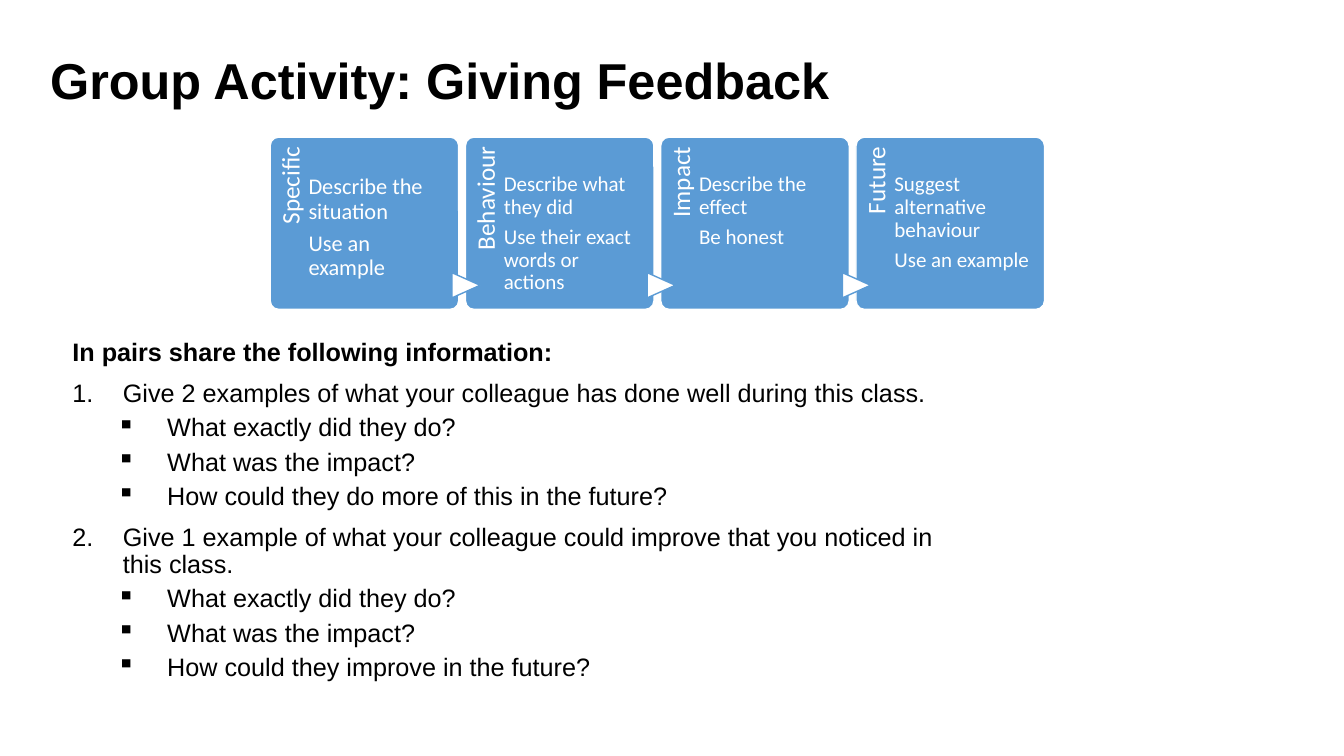
from dataclasses import dataclass

import pptx
import pptx.dml.color
import pptx.enum.shapes
import pptx.enum.text
import pptx.oxml
import pptx.oxml.ns
import pptx.util
from pptx.util import Inches

BLACK, WHITE, BLUE = "000000", "FFFFFF", "5B9BD5"
PRESET = pptx.enum.shapes.MSO_SHAPE
ALIGN = pptx.enum.text.PP_ALIGN
ANCHOR = pptx.enum.text.MSO_ANCHOR

CARD_LEFT, CARD_TOP, CARD_WIDTH, CARD_HEIGHT = 2.68, 1.36, 1.87, 1.71
CARD_STEP = (8.49 - CARD_LEFT) / 3


@dataclass
class Step:
    name: str
    advice: list[str]
    size: int = 15


@dataclass
class Line:
    text: str
    kind: str = "detail"


@dataclass
class LineStyle:
    level: int
    before: int
    indent: float
    bullet: str


STEPS = [
    Step("Specific", ["Describe the situation", "Use an example"], 16),
    Step("Behaviour", ["Describe what they did", "Use their exact words or actions"]),
    Step("Impact", ["Describe the effect", "Be honest"]),
    Step("Future", ["Suggest alternative behaviour", "Use an example"]),
]
TASKS = [
    Line("In pairs share the following information:", "heading"),
    Line("Give 2 examples of what your colleague has done well during this class.", "task"),
    Line("What exactly did they do?"),
    Line("What was the impact?"),
    Line("How could they do more of this in the future?"),
    Line("Give 1 example of what your colleague could improve that you noticed in this class.", "task"),
    Line("What exactly did they do?"),
    Line("What was the impact?"),
    Line("How could they improve in the future?"),
]
LINE_STYLES = {
    "heading": LineStyle(0, 0, 0, ""),
    "task": LineStyle(0, 10, 0.5, '<a:buAutoNum {} type="arabicPeriod"/>'),
    "detail": LineStyle(1, 5, 0.94, '<a:buChar {} char="▪"/>'),
}


def rgb(color: str) -> pptx.dml.color.RGBColor:
    return pptx.dml.color.RGBColor.from_string(color)


def add_box(slide, left: float, top: float, width: float, height: float,
            insets=(0.1, 0.05, 0.1, 0.05)):
    """Add a wrapping text box; insets run left, top, right, bottom."""
    box = slide.shapes.add_textbox(Inches(left), Inches(top), Inches(width), Inches(height))
    frame = box.text_frame
    frame.word_wrap = True
    (frame.margin_left, frame.margin_top,
     frame.margin_right, frame.margin_bottom) = map(Inches, insets)
    return box


def add_text(frame, index: int, text: str, size: int, font: str, color: str,
             bold: bool = False):
    """Write one paragraph, reusing the frame's first one for index 0."""
    paragraph = frame.add_paragraph() if index else frame.paragraphs[0]
    paragraph.line_spacing = 0.9
    run = paragraph.add_run()
    run.text = text
    run.font.size = pptx.util.Pt(size)
    run.font.name = font
    run.font.bold = bold
    run.font.color.rgb = rgb(color)
    return paragraph


def add_preset(slide, preset, left: float, top: float, width: float, height: float,
               fill: str, outline: str):
    shape = slide.shapes.add_shape(
        preset, Inches(left), Inches(top), Inches(width), Inches(height))
    shape.shadow.inherit = False
    shape.fill.solid()
    shape.fill.fore_color.rgb = rgb(fill)
    shape.line.color.rgb = rgb(outline)
    shape.line.width = pptx.util.Pt(1)
    return shape


def add_step(slide, position: int, step: Step) -> None:
    left = CARD_LEFT + position * CARD_STEP
    card = add_preset(slide, PRESET.ROUNDED_RECTANGLE, left, CARD_TOP,
                      CARD_WIDTH, CARD_HEIGHT, BLUE, WHITE)
    card.adjustments[0] = 0.05

    # Step name, reading upwards
    name = add_box(slide, left - 0.51, 1.88, 1.4, 0.37, (0, 0.07, 0.09, 0))
    name.rotation = 270
    add_text(name.text_frame, 0, step.name, 18, "Calibri", WHITE).alignment = ALIGN.RIGHT

    # Arrow from the previous card
    if position:
        arrow = add_preset(slide, PRESET.FLOWCHART_EXTRACT, left - 0.12, 2.69,
                           0.25, 0.28, WHITE, BLUE)
        arrow.rotation = 90

    # Advice starts one line below the card's top
    top_inset = 0.06 + step.size * 1.45 / 72
    advice = add_box(slide, left + 0.38, CARD_TOP, 1.39, CARD_HEIGHT, (0, top_inset, 0, 0))
    for index, text in enumerate(step.advice):
        paragraph = add_text(advice.text_frame, index, text, step.size, "Calibri", WHITE)
        paragraph.space_after = pptx.util.Pt(step.size * 0.35)


def add_task_line(frame, index: int, line: Line) -> None:
    style = LINE_STYLES[line.kind]
    paragraph = add_text(frame, index, line.text, 18, "Arial", BLACK, line.kind == "heading")
    paragraph.level = style.level
    paragraph.space_before = pptx.util.Pt(style.before)
    if style.bullet:
        properties = paragraph._p.get_or_add_pPr()
        properties.set("marL", str(Inches(style.indent)))
        properties.set("indent", str(Inches(-0.5)))
        properties.append(pptx.oxml.parse_xml(
            style.bullet.format(pptx.oxml.ns.nsdecls("a"))))


def main() -> None:
    deck = pptx.Presentation()
    deck.slide_width, deck.slide_height = Inches(13.33), Inches(7.5)
    slide = deck.slides.add_slide(deck.slide_layouts[6])

    # Title
    title = add_box(slide, 0.4, 0.3, 9.17, 1.06).text_frame
    title.vertical_anchor = ANCHOR.MIDDLE
    add_text(title, 0, "Group Activity: Giving Feedback", 36, "Arial", BLACK, True)

    # Feedback steps
    for position, step in enumerate(STEPS):
        add_step(slide, position, step)

    # Tasks for the pairs
    tasks = add_box(slide, 0.62, 3.32, 8.95, 4.1).text_frame
    for index, line in enumerate(TASKS):
        add_task_line(tasks, index, line)

    deck.save("out.pptx")


if __name__ == "__main__":
    main()
